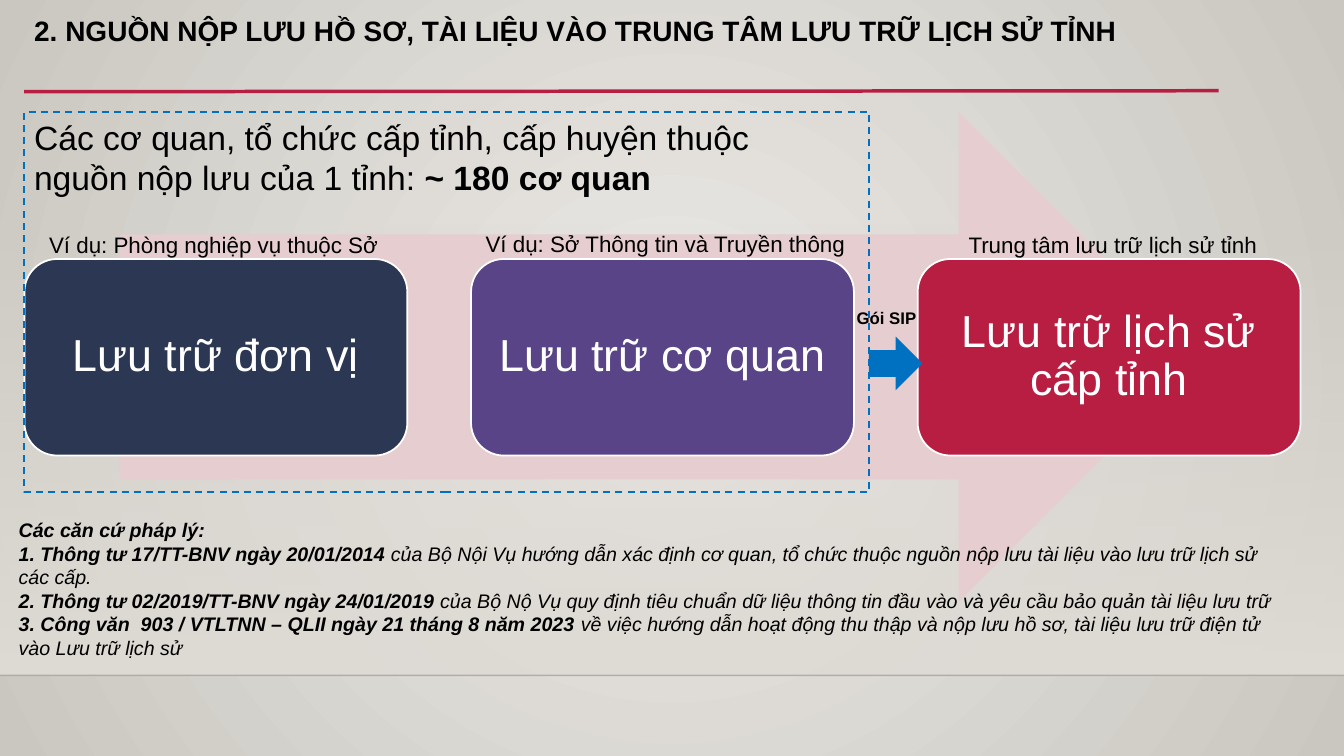
"""Builds the slide on sources of records for the provincial archive."""
from pptx import Presentation
from pptx.dml.color import RGBColor as RGB
from pptx.enum.dml import MSO_LINE as Dash
from pptx.enum.shapes import MSO_CONNECTOR as Conn, MSO_SHAPE as Kind
from pptx.enum.text import MSO_ANCHOR as Anchor, PP_ALIGN as Align
from pptx.oxml import parse_xml
from pptx.oxml.ns import nsdecls
from pptx.util import Pt

BLACK = RGB(0, 0, 0)
WHITE = RGB(0xFF, 0xFF, 0xFF)
NAVY = RGB(0x2C, 0x37, 0x53)
PURPLE = RGB(0x59, 0x44, 0x87)
RED = RGB(0xB7, 0x1E, 0x42)
PINK = RGB(0xE6, 0xCD, 0xCF)
BLUE = RGB(0x00, 0x70, 0xC0)
LIGHT = RGB(0xEC, 0xEA, 0xE7)
GREY = RGB(0xCA, 0xC7, 0xC1)
SAND = RGB(0xDF, 0xDB, 0xD5)
EDGE = RGB(0, 0, 1)


def shape(kind, left, top, width, height, fill=None):
    item = slide.shapes.add_shape(kind, Pt(left), Pt(top), Pt(width), Pt(height))
    item.shadow.inherit = False
    item.line.fill.background()
    if fill is None:
        item.fill.background()
    else:
        item.fill.solid()
        item.fill.fore_color.rgb = fill
    return item


def write(frame, paras, size, color=BLACK, italic=None):
    frame.word_wrap = True
    for num, runs in enumerate(paras):
        para = frame.add_paragraph() if num else frame.paragraphs[0]
        for words, bold in runs:
            run = para.add_run()
            run.text = words
            font = run.font
            font.name, font.size = "Arial", Pt(size)
            font.bold, font.italic = bold, italic
            font.color.rgb = color


deck = Presentation()
deck.slide_width, deck.slide_height = Pt(960), Pt(540)
slide = deck.slides.add_slide(deck.slide_layouts[6])

back = slide.background.fill
back.gradient()
for stop, color in zip(back.gradient_stops, (LIGHT, GREY)):
    stop.color.rgb = color
glow = slide.element.xpath(".//p:bg//a:lin")[0]
glow.getparent().replace(glow, parse_xml(
    f'<a:path {nsdecls("a")} path="circle">'
    '<a:fillToRect l="50000" t="50000" r="50000" b="50000"/></a:path>'))

floor = shape(Kind.RECTANGLE, 0, 159, 960, 323.4)
floor.fill.gradient()
floor.fill.gradient_angle = 270
for stop in floor.fill.gradient_stops:
    stop.color.rgb = SAND
clear = floor.element.xpath(".//a:gs/a:srgbClr")[0]
clear.append(parse_xml(f'<a:alpha {nsdecls("a")} val="0"/>'))

for left, top, right, end, color, width in (
    (0, 482.4, 960, 482.4, EDGE, 1),
    (17.3, 65.5, 870.5, 64.8, RED, 2.5),
):
    rule = slide.shapes.add_connector(Conn.STRAIGHT, Pt(left), Pt(top), Pt(right), Pt(end))
    rule.line.color.rgb = color
    rule.line.width = Pt(width)
    rule.element.spPr.append(parse_xml(f'<a:effectLst {nsdecls("a")}/>'))
    if color == EDGE:
        tint = rule.element.xpath(".//a:srgbClr")[0]
        tint.append(parse_xml(f'<a:alpha {nsdecls("a")} val="20000"/>'))

shape(Kind.RIGHT_ARROW, 85.7, 80, 774, 350, PINK)

for num, (words, color) in enumerate((
    ("Lưu trữ đơn vị", NAVY),
    ("Lưu trữ cơ quan", PURPLE),
    ("Lưu trữ lịch sử cấp tỉnh", RED),
)):
    stage = shape(Kind.ROUNDED_RECTANGLE, 17.5 + 319 * num, 185, 273.5, 140.4, color)
    stage.line.color.rgb = WHITE
    stage.line.width = Pt(1.25)
    frame = stage.text_frame
    frame.margin_left = frame.margin_right = Pt(9)
    frame.vertical_anchor = Anchor.MIDDLE
    write(frame, [[(words, None)]], 32, WHITE)
    frame.paragraphs[0].alignment = Align.CENTER
    frame.paragraphs[0].line_spacing = 0.9

scope = shape(Kind.RECTANGLE, 17.3, 80, 603.4, 271.4)
scope.line.color.rgb = BLUE
scope.line.width = Pt(1.25)
scope.line.dash_style = Dash.DASH
shape(Kind.RIGHT_ARROW, 620.7, 240.5, 38.2, 38.2, BLUE)

title = [[("2. NGUỒN NỘP LƯU HỒ SƠ, TÀI LIỆU VÀO TRUNG TÂM LƯU TRỮ LỊCH SỬ TỈNH", True)]]
count = [[("Các cơ quan, tổ chức cấp tỉnh, cấp huyện thuộc nguồn nộp lưu của 1 tỉnh:", None),
          (" ~ 180 cơ quan", True)]]
legal = [
    [("Các căn cứ pháp lý:", True)],
    [("1. Thông tư 17/TT-BNV ngày 20/01/2014", True),
     (" của Bộ Nội Vụ hướng dẫn xác định cơ quan, tổ chức thuộc nguồn nộp lưu "
      "tài liệu vào lưu trữ lịch sử các cấp.", None)],
    [("2. Thông tư 02/2019/TT-BNV ngày 24/01/2019 ", True),
     ("của Bộ Nộ Vụ quy định tiêu chuẩn dữ liệu thông tin đầu vào và yêu cầu "
      "bảo quản tài liệu lưu trữ", None)],
    [("3. Công văn  903 / VTLTNN – QLII ngày 21 tháng 8 năm 2023 ", True),
     ("về việc hướng dẫn hoạt động thu thập và nộp lưu hồ sơ, tài liệu lưu trữ "
      "điện tử vào Lưu trữ lịch sử", None)],
]
for left, top, width, height, paras, size, italic in (
    (17.3, 8.6, 855.4, 41, title, 20, None),
    (17.3, 80, 552.2, 65.5, count, 24, None),
    (604.8, 216, 57.6, 21.6, [[("Gói SIP", True)]], 12, None),
    (28, 161.3, 275, 26.6, [[("Ví dụ: Phòng nghiệp vụ thuộc Sở", None)]], 16, None),
    (339.8, 160.6, 275, 26.6, [[("Ví dụ: Sở Thông tin và Truyền thông", None)]], 16, None),
    (684.7, 161.3, 275, 26.6, [[("Trung tâm lưu trữ lịch sử tỉnh", None)]], 16, None),
    (6.2, 366.5, 910.8, 131, legal, 14, True),
):
    box = slide.shapes.add_textbox(Pt(left), Pt(top), Pt(width), Pt(height))
    write(box.text_frame, paras, size, italic=italic)
    if paras is title:
        box.text_frame.paragraphs[0].line_spacing = 0.9
    if size == 12:
        box.text_frame.word_wrap = False

deck.save("out.pptx")
